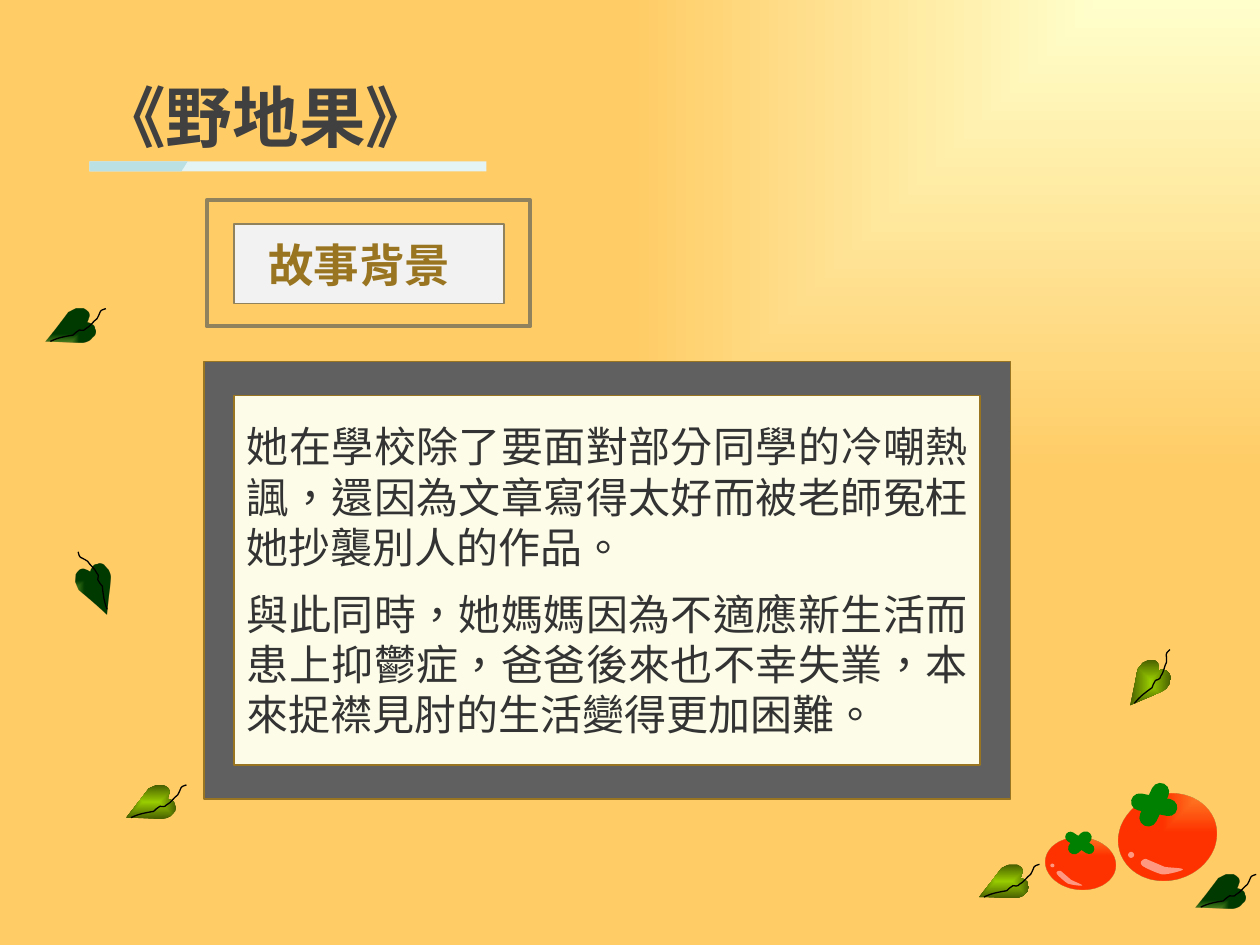
from dataclasses import dataclass
from math import cos, radians, sin

from lxml.etree import SubElement
from pptx import Presentation
from pptx.dml.color import RGBColor as Rgb
from pptx.enum.shapes import MSO_SHAPE as Kind
from pptx.enum.text import MSO_ANCHOR as Anchor, PP_ALIGN as Align
from pptx.oxml.ns import qn
from pptx.util import Inches, Pt


@dataclass(frozen=True)
class Theme:
    glow: tuple = (("FFFFCC", 100), ("FFCC66", 100))
    fruit: tuple = (("FF9933", 90), ("FF3300", 100))
    dark: tuple = (("008000", 40), ("003B00", 100))
    light: tuple = (("99CC00", 100), ("475E00", 100))
    stem: str = "008000"
    white: str = "FFFFFF"
    black: str = "000000"
    frame: str = "606060"
    paper: str = "FCFCE9"
    gold: str = "997521"
    olive: str = "91825E"
    badge: str = "F2F2F2"
    bar: str = "E4F3F4"
    tab: str = "BBE0E3"
    ink: str = "333333"
    head: str = "404040"
    sans: str = "Noto Sans CJK SC"
    serif: str = "Times New Roman"
    big: int = 38
    mid: int = 26
    text: int = 24


T = Theme()
RIGHT_TOP = (100, 0, 0, 100)
LEFT_LOW = (0, 100, 100, 0)
CENTER = (50, 50, 50, 50)

# Leaf outline and vein in inches from the leaf's middle: start, then curves
LEAF = [(.15, -.06), (.15, -.07), (.16, -.08), (.16, -.09),
        (.17, -.11), (.17, -.12), (.16, -.14),
        (.15, -.15), (.14, -.16), (.12, -.17),
        (.10, -.17), (.08, -.17), (.06, -.17),
        (.04, -.16), (.02, -.15), (0, -.14),
        (-.06, -.06), (-.12, .02), (-.18, .09),
        (-.08, .09), (.02, .10), (.11, .10),
        (.13, .10), (.15, .09), (.17, .08),
        (.18, .07), (.20, .05), (.21, .04),
        (.22, .02), (.22, 0), (.21, -.01),
        (.21, -.03), (.20, -.04), (.18, -.05),
        (.18, -.05), (.16, -.06), (.15, -.06)]
VEIN = [(-.14, .09), (-.08, .06), (-.02, .05), (.04, .04),
        (.05, .03), (.07, .01), (.09, 0),
        (.10, 0), (.13, .01), (.14, -.01),
        (.18, -.03), (.20, -.07), (.23, -.09),
        (.27, -.16), (.24, -.15), (.30, -.17)]
# Shine on a tomato, in parts of its width and height
SHINE = [(-.11, .33), (-.06, .36), (.07, .40), (.06, .42),
         (.06, .43), (-.09, .43), (-.15, .41),
         (-.20, .38), (-.30, .28), (-.32, .25),
         (-.35, .21), (-.31, .17), (-.27, .18)]


def alpha(fill, pct):
    if pct < 100:
        for clr in fill.iter(qn("a:srgbClr")):
            SubElement(clr, qn("a:alpha"), val=str(pct * 1000))


def blend(fill, stops, focus, node):
    """Fill with a rectangular gradient that spreads from the focus."""
    fill.gradient()
    grad = next(node.iter(qn("a:gradFill")))
    for stop, (rgb, _) in zip(fill.gradient_stops, stops):
        stop.color.rgb = Rgb.from_string(rgb)
    for gs, (_, pct) in zip(grad.iter(qn("a:gs")), stops):
        alpha(gs, pct)
    grad.remove(grad.find(qn("a:lin")))
    way = SubElement(grad, qn("a:path"), path="rect")
    sides = {k: str(v * 1000) for k, v in zip("ltrb", focus)}
    SubElement(way, qn("a:fillToRect"), **sides)


def paint(shape, fill=None, line=None, width=1, pct=100):
    shape.shadow.inherit = False
    if fill:
        shape.fill.solid()
        shape.fill.fore_color.rgb = Rgb.from_string(fill)
        alpha(shape._element.spPr, pct)
    else:
        shape.fill.background()
    if line:
        shape.line.color.rgb = Rgb.from_string(line)
        shape.line.width = Pt(width)
    else:
        shape.line.fill.background()
    return shape


def block(slide, box, kind=Kind.RECTANGLE, turn=0, **look):
    shape = slide.shapes.add_shape(kind, *map(Inches, box))
    shape.rotation = turn % 360
    return paint(shape, **look)


def spin(dx, dy, deg):
    c, s = cos(radians(deg)), sin(radians(deg))
    return dx * c - dy * s, dx * s + dy * c


def bend(shape):
    """Turn each three line segments into one cubic curve."""
    lines = list(shape._element.spPr.iter(qn("a:lnTo")))
    for i in range(0, len(lines), 3):
        first, *rest = lines[i:i + 3]
        curve = first.makeelement(qn("a:cubicBezTo"))
        first.addprevious(curve)
        for seg in (first, *rest):
            curve.append(seg[0])
            seg.getparent().remove(seg)


def outline(slide, pts, x=0, y=0, turn=0, close=True, curved=True, **look):
    spots = [(Inches(x + dx), Inches(y + dy)) for dx, dy in (spin(*p, turn) for p in pts)]
    pen = slide.shapes.build_freeform(*spots[0])
    pen.add_line_segments(spots[1:], close=close)
    shape = pen.convert_to_shape()
    if curved:
        bend(shape)
    return paint(shape, **look)


def write(shape, paras, form, gap=0, pitch=None, align=Align.LEFT, inset=(.08, .04)):
    frame = shape.text_frame
    dx, dy = map(Inches, inset)
    for key, val in dict(word_wrap=True, vertical_anchor=Anchor.MIDDLE, margin_left=dx,
                         margin_right=dx, margin_top=dy, margin_bottom=dy).items():
        setattr(frame, key, val)
    for i, words in enumerate(paras):
        para = frame.add_paragraph() if i else frame.paragraphs[0]
        para.alignment = align
        para.space_before = Pt(gap if i else 0)
        if pitch:
            para.line_spacing = Pt(pitch)
        run = para.add_run()
        run.text = words
        for key, val in form.items():
            if key == "color":
                run.font.color.rgb = Rgb.from_string(val)
            else:
                setattr(run.font, key, val)
        # East Asian face and language
        run.font._element.set("lang", "zh-TW")
        SubElement(run.font._element, qn("a:ea"), typeface=T.sans)


def tomato(slide, x, y, w, h, turn):
    cx, cy = x + w / 2, y + h / 2

    def part(fx, fy, pw, ph, kind, tilt=0, **look):
        dx, dy = spin(fx * w, fy * h, turn)
        box = (cx + dx - pw / 2, cy + dy - ph / 2, pw, ph)
        return block(slide, box, kind, turn + tilt, **look)

    body = part(0, 0, w, h, Kind.OVAL)
    blend(body.fill, T.fruit, RIGHT_TOP, body._element.spPr)
    part(-.4, .09, .06 * w, .07 * h, Kind.OVAL, fill=T.white, pct=50)
    for pw, ph, tilt in ((.54 * h, .18 * w, 130.8), (.47 * w, .2 * h, 26.7)):
        bar = part(-.04, -.4, pw, ph, Kind.ROUNDED_RECTANGLE, tilt, fill=T.stem)
        bar.adjustments[0] = .5
    pts = [(fx * w, fy * h) for fx, fy in SHINE]
    outline(slide, pts, cx, cy, turn, fill=T.white, pct=50)


def leaf(slide, x, y, turn, stops, focus):
    blade = outline(slide, LEAF, x, y, turn)
    blend(blade.fill, stops, focus, blade._element.spPr)
    outline(slide, VEIN, x, y, turn, close=False, line=T.black, width=.75)


def title(slide, x, y, w, h):
    low, thick = y + h, .08
    block(slide, (x, low, 3.15, thick), fill=T.bar)
    tab = [(0, 0), (.78, 0), (.73, thick), (0, thick)]
    outline(slide, tab, x, low, curved=False, fill=T.tab)
    box = slide.shapes.add_textbox(*map(Inches, (x, y, w, h)))
    write(box, ["《野地果》"], dict(size=Pt(T.big), name=T.sans, bold=True, color=T.head))


def badge(slide, x, y, w, h):
    block(slide, (x, y, w, h), line=T.olive, width=2.25)
    block(slide, (x + .22, y + .19, w - .43, h - .37), fill=T.badge, line=T.olive)
    box = slide.shapes.add_textbox(*map(Inches, (x + .41, y + .25, w - .82, .52)))
    write(box, ["故事背景"], dict(size=Pt(T.mid), name=T.sans, bold=True, color=T.gold))


def story(slide, x, y, w, h):
    dx, dy = .24, .27
    block(slide, (x, y, w, h), fill=T.frame, line=T.gold)
    page = block(slide, (x + dx, y + dy, w - 2 * dx, h - 2 * dy), fill=T.paper, line=T.gold)
    write(page, ["她在學校除了要面對部分同學的冷嘲熱諷，還因為文章寫得太好而被老師冤枉她抄襲別人的作品。",
                 "與此同時，她媽媽因為不適應新生活而患上抑鬱症，爸爸後來也不幸失業，本來捉襟見肘的生活變得更加困難。"],
          dict(size=Pt(T.text), name=T.serif, color=T.ink),
          gap=10, pitch=28.6, align=Align.JUSTIFY, inset=(.1, .05))


def main():
    deck = Presentation()
    deck.slide_width, deck.slide_height = Inches(10), Inches(7.5)
    slide = deck.slides.add_slide(deck.slide_layouts[6])
    blend(slide.background.fill, T.glow, RIGHT_TOP, slide._element)
    # Fruit and leaves
    tomato(slide, 8.87, 6.3, .79, .68, -15.8)
    tomato(slide, 8.3, 6.65, .55, .41, 5.9)
    for x, y, turn in ((.54, 2.62, 0), (.77, 4.69, -86.2), (9.67, 7.11, 0)):
        leaf(slide, x, y, turn, T.dark, LEFT_LOW)
    for x, y, turn in ((9.09, 5.44, -26), (1.18, 6.4, 0), (7.95, 7.03, 0)):
        leaf(slide, x, y, turn, T.light, CENTER)
    # Words
    story(slide, 1.62, 2.87, 6.4, 3.47)
    title(slide, .71, .56, 3.06, .72)
    badge(slide, 1.64, 1.59, 2.57, 1)
    deck.save("out.pptx")


if __name__ == "__main__":
    main()
